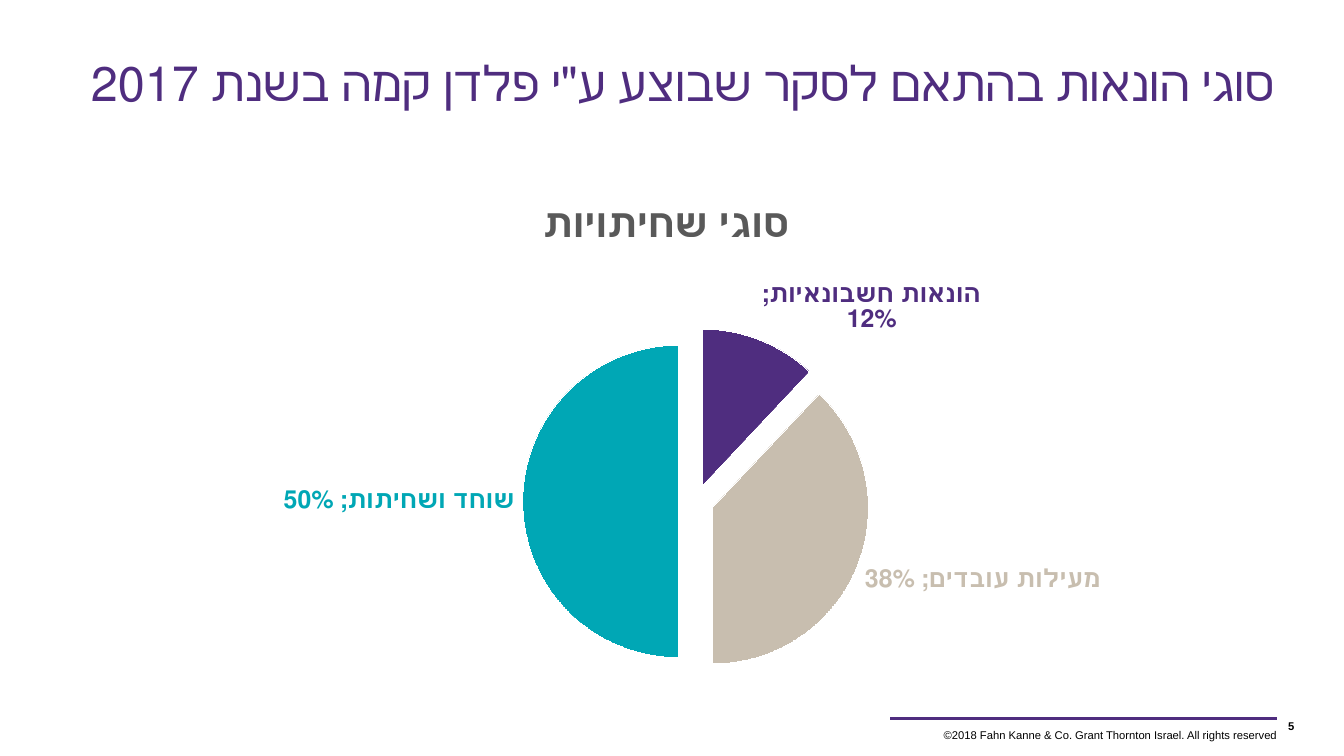
"""Build the slide on fraud types with its exploded pie chart."""
from dataclasses import dataclass

import pptx
import pptx.chart.data
import pptx.dml.color
import pptx.enum.chart
import pptx.enum.shapes
import pptx.enum.text
import pptx.oxml
import pptx.oxml.ns
import pptx.util

RGB = pptx.dml.color.RGBColor
PURPLE = RGB(0x4F, 0x2D, 0x7F)
SAND = RGB(0xC8, 0xBE, 0xAF)
TEAL = RGB(0x00, 0xA7, 0xB5)
GREY = RGB(0x59, 0x59, 0x59)
BLACK = RGB(0, 0, 0)
WHITE = RGB(0xFF, 0xFF, 0xFF)
FONT = "Arial"
EMU_PER_PX = 9525
RIGHT = pptx.enum.text.PP_ALIGN.RIGHT
LEFT = pptx.enum.text.PP_ALIGN.LEFT
TOP = pptx.enum.text.MSO_ANCHOR.TOP
MIDDLE = pptx.enum.text.MSO_ANCHOR.MIDDLE


@dataclass(frozen=True)
class Box:
    """A rectangle in px."""
    x: int
    y: int
    w: int
    h: int

    def emu(self) -> tuple:
        """Return left, top, width and height in EMU."""
        return tuple(px(v) for v in (self.x, self.y, self.w, self.h))


@dataclass(frozen=True)
class Slice:
    """One pie slice."""
    name: str
    value: float
    color: RGB


SLICES = [
    Slice("הונאות חשבונאיות", 0.12, PURPLE),
    Slice("מעילות עובדים", 0.38, SAND),
    Slice("שוחד ושחיתות", 0.5, TEAL),
]


def px(n: int) -> pptx.util.Emu:
    """Turn px into EMU."""
    return pptx.util.Emu(n * EMU_PER_PX)


def element(tag: str, **attrs: str):
    """Make an XML element with a prefixed tag."""
    el = pptx.oxml.parse_xml(f"<{tag} {pptx.oxml.ns.nsdecls(tag.split(':')[0])}/>")
    for key, value in attrs.items():
        el.set(key, value)
    return el


def style(font, size: float, color: RGB, bold: bool = False) -> None:
    """Set the look of a font."""
    font.name = FONT
    font.size = pptx.util.Pt(size)
    font.bold = bold
    font.color.rgb = color


def write(sp, box: Box, text: str, size: float, color: RGB, align, anchor,
          bold: bool = False, rtl: bool = False) -> None:
    """Place a shape and fill it with one run."""
    sp.left, sp.top, sp.width, sp.height = box.emu()
    tf = sp.text_frame
    tf.word_wrap = True
    tf.auto_size = pptx.enum.text.MSO_AUTO_SIZE.NONE
    tf.vertical_anchor = anchor
    tf.margin_left = tf.margin_right = tf.margin_top = tf.margin_bottom = 0
    p = tf.paragraphs[0]
    p.alignment = align
    if rtl:
        p._p.get_or_add_pPr().set("rtl", "1")
    r = p.add_run()
    r.text = text
    style(r.font, size, color, bold)


def add_rule(s, x1: int, x2: int, y: int) -> None:
    """Draw the footer rule."""
    line = s.shapes.add_connector(
        pptx.enum.shapes.MSO_CONNECTOR.STRAIGHT, px(x1), px(y), px(x2), px(y))
    line.line.color.rgb = PURPLE
    line.line.width = pptx.util.Pt(1.5)
    line._element.spPr.append(element("a:effectLst"))


def set_plot_layout(chart, **fractions: float) -> None:
    """Fix the inner plot area as fractions of the chart."""
    area = chart._chartSpace.chart.plotArea
    for old in area.findall(pptx.oxml.ns.qn("c:layout")):
        area.remove(old)
    layout, manual = element("c:layout"), element("c:manualLayout")
    manual.append(element("c:layoutTarget", val="inner"))
    for key in ("xMode", "yMode"):
        manual.append(element(f"c:{key}", val="edge"))
    for key, value in fractions.items():
        manual.append(element(f"c:{key}", val=str(value)))
    layout.append(manual)
    area.insert(0, layout)


def paint_slice(series, i: int, item: Slice) -> None:
    """Colour a slice and label it with name and value."""
    point = series.points[i]
    point.format.fill.solid()
    point.format.fill.fore_color.rgb = item.color
    point.format.line.color.rgb = WHITE
    label = point.data_label
    style(label.font, 13.3, item.color, True)
    label.position = pptx.enum.chart.XL_LABEL_POSITION.OUTSIDE_END
    dlbl = series._element.dLbls.findall(pptx.oxml.ns.qn("c:dLbl"))[i]
    for tag, shown in (("c:showVal", "1"), ("c:showCatName", "1"), ("c:showPercent", "0")):
        dlbl.find(pptx.oxml.ns.qn(tag)).set("val", shown)
    separator = element("c:separator")
    separator.text = "; "
    dlbl.append(separator)


def add_pie(s, box: Box, title: str, slices: list[Slice]) -> None:
    """Add the exploded pie chart."""
    data = pptx.chart.data.CategoryChartData(number_format="0%")
    data.categories = [item.name for item in slices]
    data.add_series("Series 1", [item.value for item in slices])
    chart = s.shapes.add_chart(
        pptx.enum.chart.XL_CHART_TYPE.PIE, *box.emu(), data).chart
    style(chart.font, 10, BLACK)
    chart.has_legend = False
    chart.has_title = True
    r = chart.chart_title.text_frame.paragraphs[0].add_run()
    r.text = title
    style(r.font, 21.2, GREY, True)
    set_plot_layout(chart, x=0.37, y=0.29, w=0.31, h=0.67)
    plot = chart.plots[0]
    plot.vary_by_categories = True
    series = plot.series[0]
    tx = series._element.find(pptx.oxml.ns.qn("c:tx"))
    tx.addnext(element("c:explosion", val="11"))
    for i, item in enumerate(slices):
        paint_slice(series, i, item)
    labels = plot.series[0].data_labels
    labels.show_value = False
    labels.show_category_name = True
    labels.number_format = "0%"
    labels.number_format_is_linked = False
    labels.position = pptx.enum.chart.XL_LABEL_POSITION.OUTSIDE_END


def main() -> None:
    """Build and save the slide."""
    prs = pptx.Presentation()
    prs.slide_width, prs.slide_height = px(960), px(540)
    s = prs.slides.add_slide(prs.slide_layouts[5])
    write(s.shapes.title, Box(50, 38, 861, 88),
          "סוגי הונאות בהתאם לסקר שבוצע ע\"י פלדן קמה בשנת 2017",
          26, PURPLE, RIGHT, TOP, rtl=True)
    add_pie(s, Box(50, 127, 852, 370), "סוגי שחיתויות", SLICES)
    add_rule(s, 636, 912, 513)
    write(s.shapes.add_textbox(0, 0, 0, 0), Box(659, 515, 253, 20),
          "©2018 Fahn Kanne & Co. Grant Thornton Israel. All rights reserved",
          6, BLACK, RIGHT, MIDDLE)
    write(s.shapes.add_textbox(0, 0, 0, 0), Box(920, 509, 19, 19),
          "5", 6, BLACK, LEFT, MIDDLE, bold=True)
    prs.save("out.pptx")


if __name__ == "__main__":
    main()
